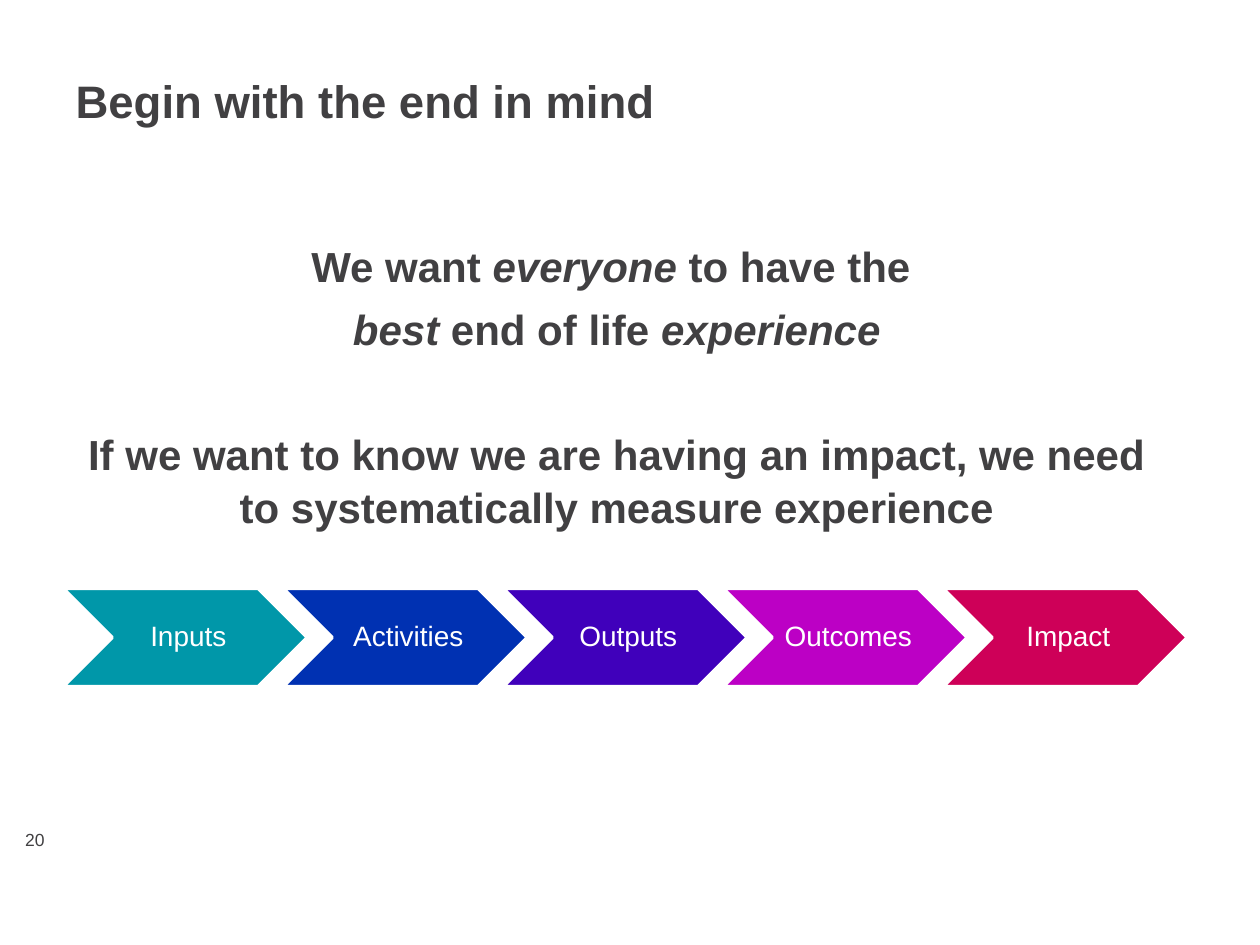
from pptx import Presentation
from pptx.dml.color import RGBColor
from pptx.enum.shapes import MSO_SHAPE
from pptx.enum.text import MSO_ANCHOR as ANCHOR, PP_ALIGN as ALIGN
from pptx.util import Inches, Pt

GREY = RGBColor(0x41, 0x40, 0x42)
WHITE = RGBColor(0xFF, 0xFF, 0xFF)
TEAL = RGBColor(0x00, 0x97, 0xA9)
BLUE = RGBColor(0x00, 0x31, 0xB2)
INDIGO = RGBColor(0x40, 0x00, 0xBB)
PURPLE = RGBColor(0xBC, 0x00, 0xC5)
RED = RGBColor(0xCE, 0x00, 0x58)


def add_run(p, text, color, **fmt):
    r = p.add_run()
    r.text = text
    r.font.name = "Arial"
    r.font.color.rgb = color
    for key, value in fmt.items():
        setattr(r.font, key, value)


def set_frame(tf, anchor, left, top, right, bottom):
    tf.word_wrap = True
    tf.vertical_anchor = anchor
    tf.margin_left, tf.margin_top = Inches(left), Inches(top)
    tf.margin_right, tf.margin_bottom = Inches(right), Inches(bottom)


prs = Presentation()
prs.slide_width, prs.slide_height = Inches(10), Inches(7.5)
s = prs.slides.add_slide(prs.slide_layouts[5])

title = s.shapes.title
title.left, title.top = Inches(0.5), Inches(0.49)
title.width, title.height = Inches(8.93), Inches(0.99)
set_frame(title.text_frame, ANCHOR.TOP, 0.1, 0.09, 0.1, 0.05)
p = title.text_frame.paragraphs[0]
p.alignment = ALIGN.LEFT
add_run(p, "Begin with the end in mind", GREY, size=Pt(26), bold=True)

number = s.shapes.add_textbox(Inches(0.2), Inches(6.54), Inches(0.47), Inches(0.24))
set_frame(number.text_frame, ANCHOR.MIDDLE, 0, 0.05, 0.04, 0.05)
add_run(number.text_frame.paragraphs[0], "20", GREY, size=Pt(10))

message = [
    (0, [("We want ", False), ("everyone", True), (" to have the ", False)]),
    (0, [("best", True), (" end of life ", False), ("experience", True)]),
    (35, [("If we want to know we are having an impact, we need "
           "to systematically measure experience", False)]),
]
body = s.shapes.add_textbox(Inches(0.43), Inches(1.84), Inches(8.93), Inches(2.5))
tf = body.text_frame
set_frame(tf, ANCHOR.TOP, 0.1, 0.05, 0.1, 0.05)
for i, (before, runs) in enumerate(message):
    p = tf.add_paragraph() if i else tf.paragraphs[0]
    p.alignment = ALIGN.CENTER
    p.line_spacing = 1.05
    p.space_before, p.space_after = Pt(before), Pt(6)
    for text, italic in runs:
        add_run(p, text, GREY, size=Pt(24), bold=True, italic=italic)

steps = [("Inputs", TEAL), ("Activities", BLUE), ("Outputs", INDIGO),
         ("Outcomes", PURPLE), ("Impact", RED)]
step_width = 1.94
pitch = 0.9 * step_width
for i, (label, color) in enumerate(steps):
    sp = s.shapes.add_shape(MSO_SHAPE.CHEVRON, Inches(0.5 + i * pitch), Inches(4.67),
                            Inches(step_width), Inches(0.78))
    sp.shadow.inherit = False
    sp.fill.solid()
    sp.fill.fore_color.rgb = color
    sp.line.color.rgb = WHITE
    sp.line.width = Pt(2)
    set_frame(sp.text_frame, ANCHOR.MIDDLE, 0.07, 0.02, 0.02, 0.02)
    p = sp.text_frame.paragraphs[0]
    p.alignment = ALIGN.CENTER
    p.line_spacing = 0.9
    add_run(p, label, WHITE, size=Pt(16))

prs.save("out.pptx")
